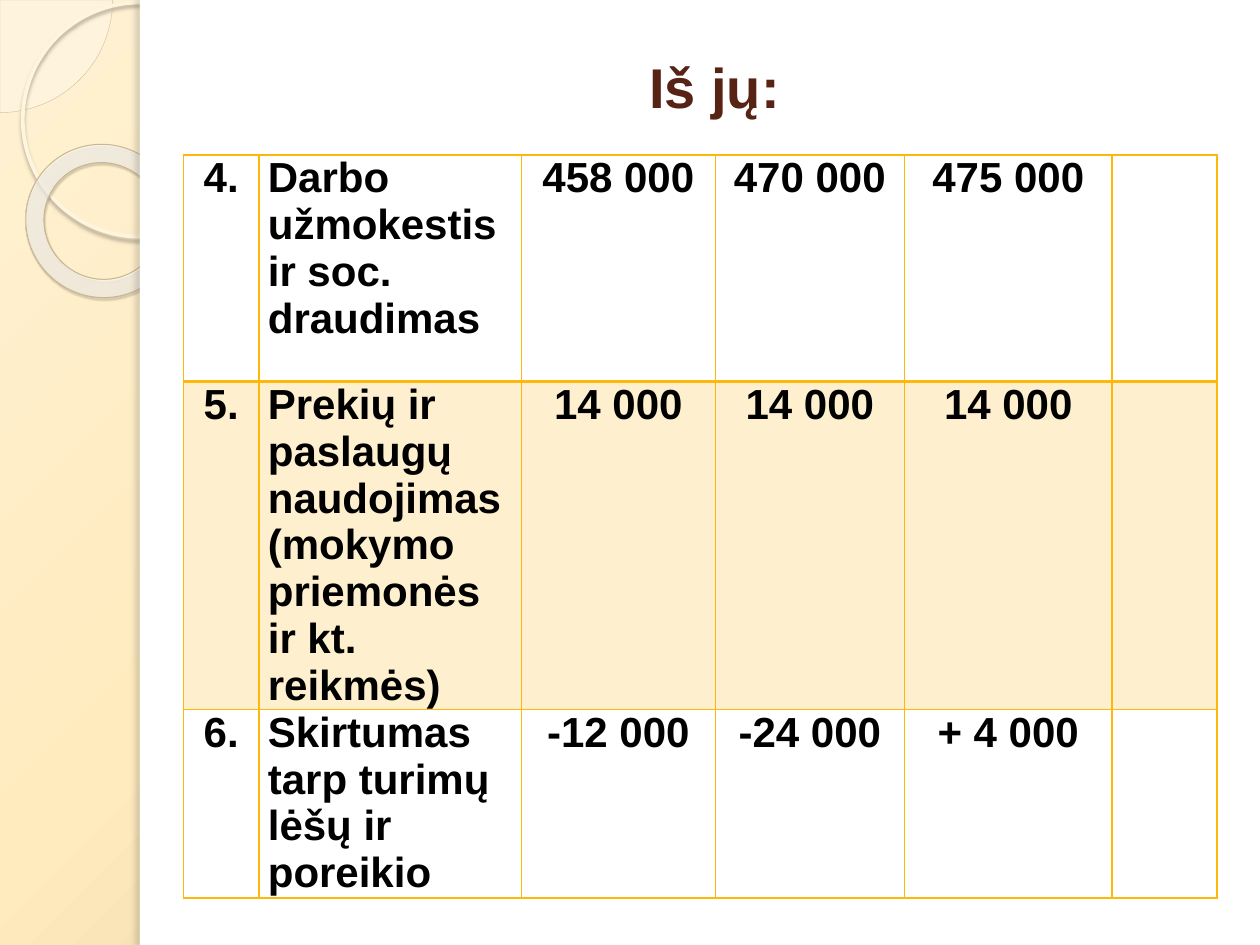
from pptx import Presentation
from pptx.dml.color import RGBColor
from pptx.enum.shapes import MSO_SHAPE
from pptx.enum.text import MSO_ANCHOR, PP_ALIGN
from pptx.oxml import parse_xml
from pptx.oxml.ns import nsdecls, qn
from pptx.util import Cm, Pt
from lxml.etree import SubElement


def color(value):
    return RGBColor.from_string(value)


def set_alpha(fill, percent):
    rgb = fill._xPr.find(f"{qn('a:solidFill')}/{qn('a:srgbClr')}")
    SubElement(rgb, qn("a:alpha"), val=str(percent * 1000))


def radial_gradient(stops, focus):
    marks = "".join(
        f'<a:gs pos="{position * 1000}"><a:srgbClr val="{value}">'
        f'<a:alpha val="{alpha * 1000}"/></a:srgbClr></a:gs>'
        for position, value, alpha in stops
    )
    edges = " ".join(f'{side}="{share * 1000}"' for side, share in zip("ltrb", focus))
    return parse_xml(
        f'<a:gradFill {nsdecls("a")} rotWithShape="1"><a:gsLst>{marks}</a:gsLst>'
        f'<a:path path="circle"><a:fillToRect {edges}/></a:path></a:gradFill>'
    )


class BudgetSlide:
    font_name = "Arial"
    title_color = "572314"
    text_color = "000000"
    accent = "FEB80A"

    def __init__(self, presentation):
        self.slide = presentation.slides.add_slide(presentation.slide_layouts[5])

    def background(self, stops, focus):
        fill = self.slide.background.fill
        fill.solid()
        solid = self.slide._element.find(f".//{qn('p:bgPr')}/{qn('a:solidFill')}")
        solid.getparent().replace(solid, radial_gradient(stops, focus))

    def decoration(self, kind, box, fill=None, alpha=None, line=None, shadow=None,
                   adjustments=(), rotation=0, gradient=None):
        ornament = self.slide.shapes.add_shape(kind, *map(Cm, box))
        ornament.rotation = rotation
        for index, value in enumerate(adjustments):
            ornament.adjustments[index] = value
        if fill:
            ornament.fill.solid()
            ornament.fill.fore_color.rgb = color(fill)
            if alpha:
                set_alpha(ornament.fill, alpha)
        else:
            ornament.fill.background()
        if gradient:
            properties = ornament._element.spPr
            properties.replace(properties.find(qn("a:noFill")), radial_gradient(*gradient))
        if line:
            ornament.line.color.rgb = color(line[0])
            ornament.line.width = Pt(line[1])
        else:
            ornament.line.fill.background()
        ornament.shadow.inherit = False
        if shadow:
            self.shadow(ornament, *shadow)

    def shadow(self, ornament, value, alpha, blur, distance, angle):
        effects = ornament._element.spPr.find(qn("a:effectLst"))
        outer = SubElement(effects, qn("a:outerShdw"), blurRad=str(Pt(blur)),
                           dist=str(Pt(distance)), dir=str(angle * 60000),
                           algn="tl", rotWithShape="0")
        rgb = SubElement(outer, qn("a:srgbClr"), val=value)
        SubElement(rgb, qn("a:alpha"), val=str(alpha * 1000))

    def label(self, frame, text, size, value, align):
        paragraph = frame.paragraphs[0]
        paragraph.text = text
        paragraph.alignment = align
        paragraph.font.name = self.font_name
        paragraph.font.size = Pt(size)
        paragraph.font.bold = True
        paragraph.font.color.rgb = color(value)

    def title(self, text, box):
        heading = self.slide.shapes.title
        heading.left, heading.top, heading.width, heading.height = map(Cm, box)
        heading.text_frame.vertical_anchor = MSO_ANCHOR.MIDDLE
        self.label(heading.text_frame, text, 32, self.title_color, PP_ALIGN.CENTER)
        self.slide.shapes._spTree.append(heading._element)

    def borders(self, cell, widths):
        properties = cell._tc.get_or_add_tcPr()
        for index, (side, width) in enumerate(zip("LRTB", widths)):
            properties.insert(index, parse_xml(
                f'<a:ln{side} {nsdecls("a")} w="{Pt(width)}"><a:solidFill>'
                f'<a:srgbClr val="{self.accent}"/></a:solidFill></a:ln{side}>'
            ))

    def table(self, rows, left, top, widths, heights):
        frame = self.slide.shapes.add_table(
            len(rows), len(widths), Cm(left), Cm(top), Cm(sum(widths)), Cm(sum(heights)))
        budget = frame.table
        budget.first_row = budget.horz_banding = False
        for column, width in zip(budget.columns, widths):
            column.width = Cm(width)
        for row, height in zip(budget.rows, heights):
            row.height = Cm(height)
        for row_index, row in enumerate(rows):
            for column_index, text in enumerate(row):
                cell = budget.cell(row_index, column_index)
                cell.margin_left = cell.margin_right = Cm(0.18)
                cell.margin_top = cell.margin_bottom = 0
                align = PP_ALIGN.LEFT if column_index == 1 else PP_ALIGN.CENTER
                self.label(cell.text_frame, text, 24, self.text_color, align)
                if row_index % 2:
                    cell.fill.solid()
                    cell.fill.fore_color.rgb = color(self.accent)
                    set_alpha(cell.fill, 20)
                else:
                    cell.fill.background()
                top_width = 2 if row_index == 1 else 1
                bottom_width = 2 if row_index == 0 else 1
                self.borders(cell, (1, 1, top_width, bottom_width))


def main():
    presentation = Presentation()
    presentation.slide_width, presentation.slide_height = Cm(25.4), Cm(19.05)
    page = BudgetSlide(presentation)
    page.background([(0, "FFF1D3", 100), (40, "FFEBBE", 100), (100, "C9B484", 100)],
                    (-24, -20, 124, 120))
    page.decoration(MSO_SHAPE.PIE, (-2.27, -2.27, 4.54, 4.54), "FEFAF4", 33,
                    line=("D3C39F", 0.25), adjustments=(0, 54))
    page.decoration(MSO_SHAPE.OVAL, (0.46, 0.05, 4.72, 4.72), line=("FFF5DE", 2.15),
                    shadow=("B0A68F", 85, 2, 2, 90))
    page.decoration(MSO_SHAPE.DONUT, (0.51, 2.92, 3.12, 3.07), line=("C7B893", 0.58),
                    shadow=("5A5444", 35, 1, 1.2, 75), adjustments=(0.12,), rotation=38.6,
                    gradient=([(0, "FFFCF6", 70), (70, "FFFEFB", 55), (100, "F0D28E", 60)],
                              (-408, -50, 508, 150)))
    page.decoration(MSO_SHAPE.RECTANGLE, (2.82, 0, 22.58, 19.05), "FFFFFF")
    page.decoration(MSO_SHAPE.RECTANGLE, (2.82, 0, 0.2, 19.05), "FFFFFF",
                    shadow=("736F63", 25, 3, 3, 180))
    page.title("Iš jų:", (3.99, 0.76, 20.83, 1.96))
    page.table(
        [
            ("4.", "Darbo užmokestis ir soc. draudimas", "458 000", "470 000", "475 000", ""),
            ("5.", "Prekių ir paslaugų naudojimas (mokymo priemonės ir kt. reikmės)",
             "14 000", "14 000", "14 000", ""),
            ("6.", "Skirtumas tarp turimų lėšų ir poreikio",
             "-12 000", "-24 000", "+ 4 000", ""),
        ],
        3.7, 3.12, (1.52, 5.29, 3.91, 3.81, 4.19, 2.11), (4.57, 6.6, 3.8))
    presentation.save("out.pptx")


if __name__ == "__main__":
    main()
